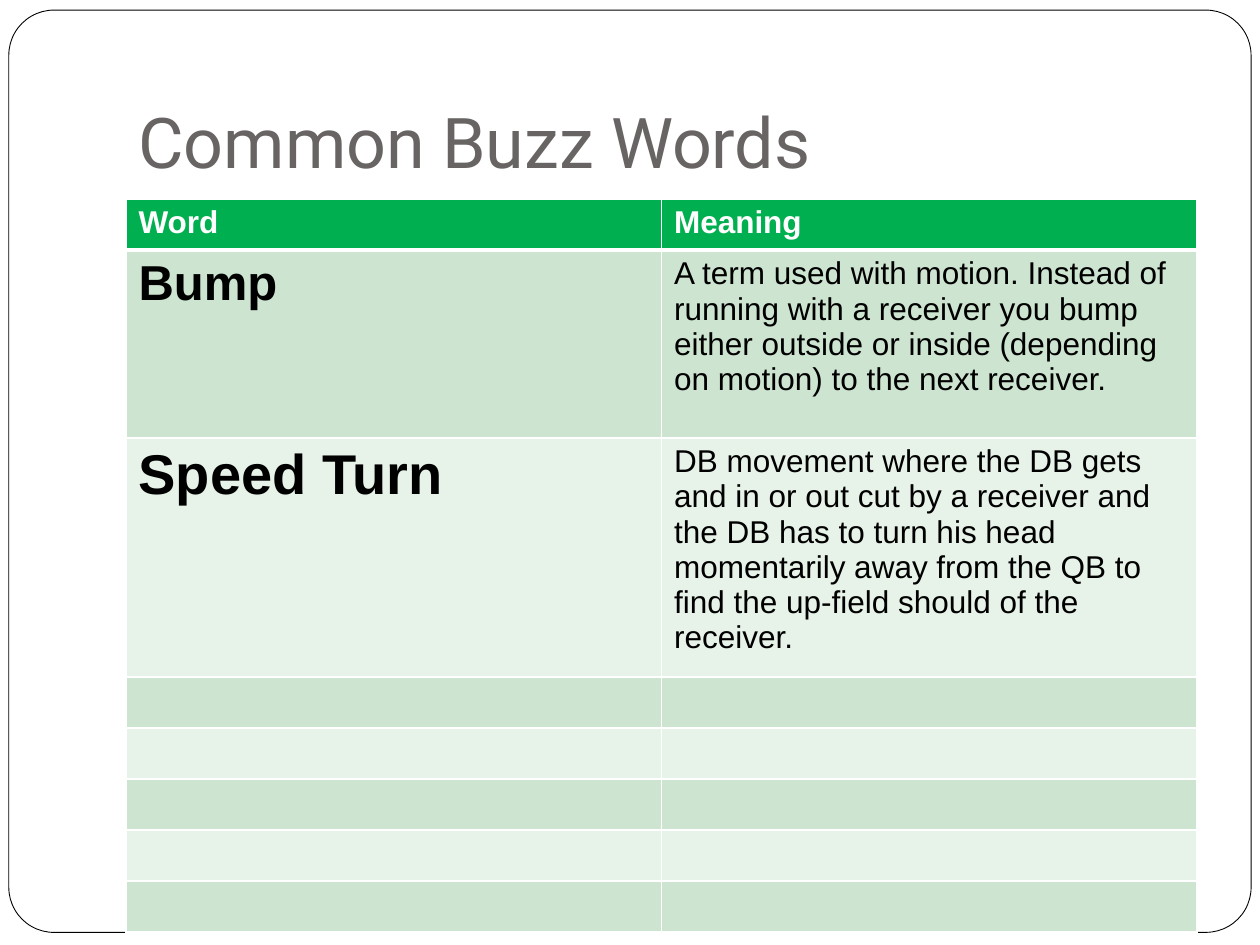
from lxml.etree import SubElement
from pptx import Presentation
from pptx.dml.color import RGBColor
from pptx.enum.shapes import MSO_SHAPE as Shape
from pptx.enum.text import MSO_ANCHOR as Anchor
from pptx.oxml.ns import qn
from pptx.util import Inches, Pt

WIDTH, HEIGHT = 10, 7.5
LEFT, CONTENT_WIDTH = 0.1 * WIDTH, 0.85 * WIDTH
TABLE_TOP, TABLE_HEIGHT = 1.58, 5.7
TALL_ROWS = {1: 1.49, 2: 1.78}
WHITE, BLACK, GREY, GREEN = "FFFFFF", "000000", "696464", "00B050"
BANDS = ("E7F2E9", "CCE4D0")
EMPTY_ROWS = 5
ENTRIES = [
    ("Bump", 28,
     "A term used with motion. Instead of running with a receiver you bump "
     "either outside or inside (depending on motion) to the next receiver."),
    ("Speed Turn", 32,
     "DB movement where the DB gets and in or out cut by a receiver and the DB "
     "has to turn his head momentarily away from the QB to find the up-field "
     "should of the receiver."),
]


def paint(color_format, color):
    """Set a fill or font colour from a hex string."""
    if hasattr(color_format, "solid"):
        color_format.solid()
        color_format = color_format.fore_color
    color_format.rgb = RGBColor.from_string(color)


def write(text_frame, text, size=18, color=BLACK, bold=False, font="Arial"):
    """Write one formatted run into a text frame."""
    run = text_frame.paragraphs[0].add_run()
    run.text = text
    run.font.name, run.font.size, run.font.bold = font, Pt(size), bold
    paint(run.font.color, color)


def add_frame(slide):
    """Draw the rounded outline around the slide."""
    frame = slide.shapes.add_shape(
        Shape.ROUNDED_RECTANGLE, Inches(0.07), Inches(0.08),
        Inches(WIDTH - 0.14), Inches(HEIGHT - 0.18))
    frame.shadow.inherit = False
    frame.adjustments[0] = 0.049
    paint(frame.fill, WHITE)
    paint(frame.line.fill, BLACK)
    frame.line.width = Pt(0.5)


def add_title(slide, text):
    """Place the heading above the table."""
    box = slide.shapes.add_textbox(
        Inches(LEFT), Inches(0.3), Inches(CONTENT_WIDTH), Inches(1.25))
    text_frame = box.text_frame
    text_frame.word_wrap = True
    text_frame.vertical_anchor = Anchor.BOTTOM
    text_frame.margin_bottom = Inches(0.1)
    write(text_frame, text, size=40, color=GREY, font="Roboto")


def style_cell(cell, fill, top=1, bottom=1):
    """Give a cell white borders and a solid fill."""
    properties = cell._tc.get_or_add_tcPr()
    for side, width in (("L", 1), ("R", 1), ("T", top), ("B", bottom)):
        line = SubElement(properties, qn(f"a:ln{side}"), w=str(Pt(width)))
        solid = SubElement(line, qn("a:solidFill"))
        SubElement(solid, qn("a:srgbClr"), val=WHITE)
    paint(cell.fill, fill)


def add_word_table(slide):
    """Build the banded table of words and meanings."""
    row_count = 1 + len(ENTRIES) + EMPTY_ROWS
    table = slide.shapes.add_table(
        row_count, 2, Inches(LEFT), Inches(TABLE_TOP),
        Inches(CONTENT_WIDTH), Inches(TABLE_HEIGHT)).table
    short_row = (TABLE_HEIGHT - sum(TALL_ROWS.values())) / (row_count - len(TALL_ROWS))
    for index, row in enumerate(table.rows):
        row.height = Inches(TALL_ROWS.get(index, short_row))
        for cell in row.cells:
            style_cell(cell, BANDS[index % 2] if index else GREEN,
                       top=3 if index == 1 else 1, bottom=1 if index else 3)
    for column, heading in enumerate(("Word", "Meaning")):
        write(table.cell(0, column).text_frame, heading, color=WHITE, bold=True)
    for row, (word, size, meaning) in enumerate(ENTRIES, start=1):
        write(table.cell(row, 0).text_frame, word, size=size, bold=True)
        write(table.cell(row, 1).text_frame, meaning)


def main():
    """Build and save the slide."""
    presentation = Presentation()
    presentation.slide_width, presentation.slide_height = Inches(WIDTH), Inches(HEIGHT)
    slide = presentation.slides.add_slide(presentation.slide_layouts[6])
    paint(slide.background.fill, WHITE)
    add_frame(slide)
    add_title(slide, "Common Buzz Words")
    add_word_table(slide)
    presentation.save("out.pptx")


if __name__ == "__main__":
    main()
